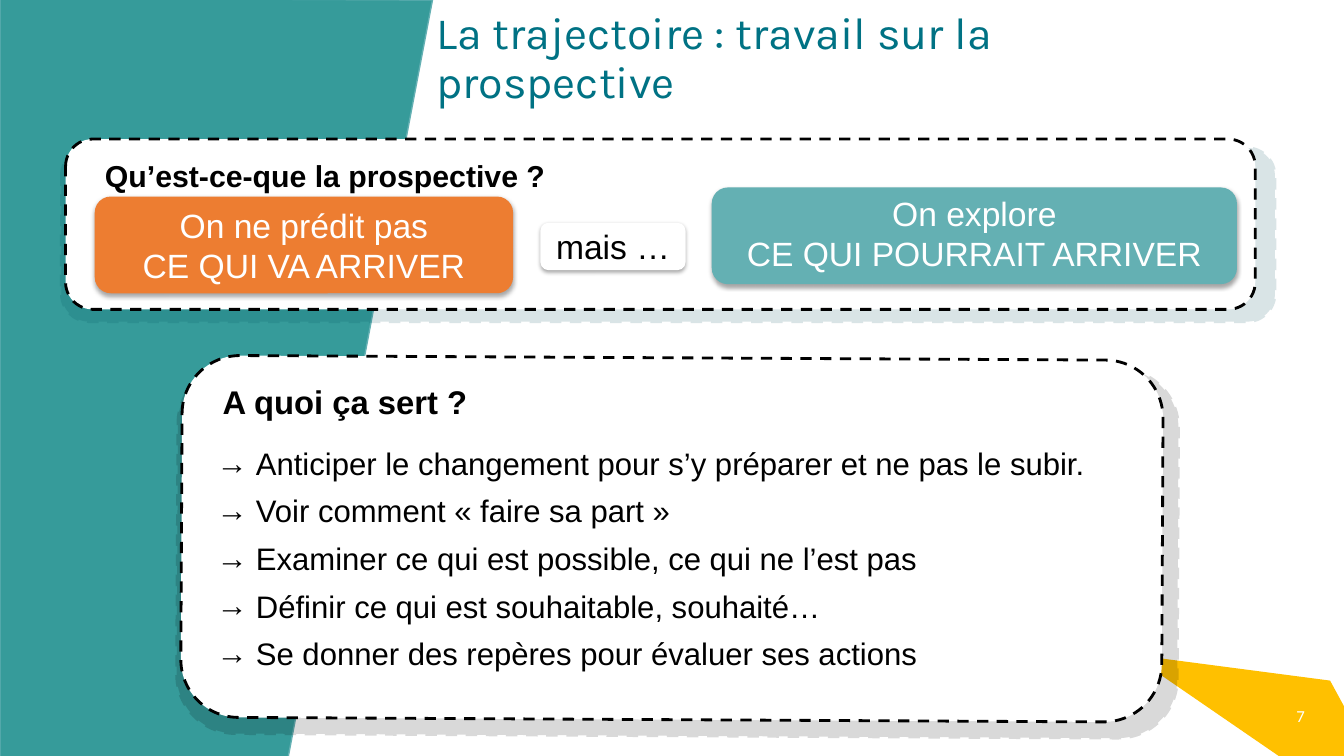
import math
from dataclasses import dataclass

import pptx
import pptx.dml.color
import pptx.enum.dml
import pptx.enum.shapes
import pptx.enum.text
import pptx.util
from lxml import etree

SHAPES = pptx.enum.shapes.MSO_SHAPE
ALIGN = pptx.enum.text.PP_ALIGN
ANCHOR = pptx.enum.text.MSO_ANCHOR
WIDTH, HEIGHT = 13.33, 7.5


@dataclass(frozen=True)
class Theme:
    teal: str = "369B9A"
    light_teal: str = "64B0B3"
    title_teal: str = "007284"
    shade_teal: str = "004E5C"
    orange: str = "ED7D31"
    yellow: str = "FFC000"
    white: str = "FFFFFF"
    black: str = "000000"
    body_font: str = "Arial"
    title_font: str = "Karla"
    number_font: str = "Calibri"
    title: float = 32
    label: float = 24
    purpose: float = 23.4
    bullet: float = 22.2
    question: float = 21.6
    number: float = 12


THEME = Theme()

# Places are left, top, width, height in percent of the slide.
TITLE = ("La trajectoire : travail sur la prospective", (31.73, 0.8, 56.19, 9.47))
NUMBER = ("7", (90.47, 92, 7.35, 5.33))
WEDGE = [(0, -0.27), (32.18, 0), (21.45, 100.13), (0, 100.13)]
CORNER = (83.95, 89.07, 26.18, 11.87)
CARDS = [  # place, rotation, shadow colour
    ((4.88, 18.4, 88.52, 22.53), 0, THEME.shade_teal),
    ((13.5, 47.33, 72.99, 47.87), 0.3, THEME.black),
]
QUESTION = ("Qu’est-ce-que la prospective ?", (4.88, 19.6, 39.91, 8.4))
PURPOSE = ("A quoi ça sert ?", (15.83, 46.53, 56.71, 13.87))
LABELS = [  # lines, place, fill, text colour, top inset
    (["On ne prédit pas", "CE QUI VA ARRIVER"], (7.05, 26, 31.13, 12.8),
     THEME.orange, THEME.white, 0.05),
    (["On explore", "CE QUI POURRAIT ARRIVER"], (52.96, 24.8, 39.08, 12.8),
     THEME.light_teal, THEME.white, 0),
    (["mais …"], (40.21, 29.47, 10.8, 6.27), THEME.white, THEME.black, 0.05),
]
REASONS = [
    "Anticiper le changement pour s’y préparer et ne pas le subir.",
    "Voir comment «\u00a0faire sa part\u00a0»",
    "Examiner ce qui est possible, ce qui ne l’est pas",
    "Définir ce qui est souhaitable, souhaité…",
    "Se donner des repères pour évaluer ses actions",
]
REASONS_PLACE = (15.38, 58.67, 69.17, 33.47)
BULLET_INDENT = 0.39


def color(code):
    return pptx.dml.color.RGBColor.from_string(code)


def inches(place):
    return [pptx.util.Inches(share / 100 * side)
            for share, side in zip(place, (WIDTH, HEIGHT) * 2)]


def paint(shape, fill, line=None, width=1):
    shape.shadow.inherit = False
    shape.fill.solid()
    shape.fill.fore_color.rgb = color(fill)
    if line:
        shape.line.color.rgb = color(line)
        shape.line.width = pptx.util.Pt(width)
    else:
        shape.line.fill.background()


def cast_shadow(shape, code, opacity, blur, distance, angle, scale=100):
    """Give a painted shape an outer shadow; lengths in points, the rest in percent and degrees."""
    effects = shape._element.spPr.find(pptx.oxml.ns.qn("a:effectLst"))
    shadow = etree.SubElement(
        effects, pptx.oxml.ns.qn("a:outerShdw"),
        blurRad=str(pptx.util.Pt(blur)), dist=str(pptx.util.Pt(distance)),
        dir=str(angle * 60000), sx=str(scale * 1000), sy=str(scale * 1000),
        algn="tl", rotWithShape="0")
    tint = etree.SubElement(shadow, pptx.oxml.ns.qn("a:srgbClr"), val=code)
    etree.SubElement(tint, pptx.oxml.ns.qn("a:alpha"), val=str(opacity * 1000))


def add_bullet(para):
    indent = pptx.util.Inches(BULLET_INDENT)
    props = para._p.get_or_add_pPr()
    props.set("marL", str(indent))
    props.set("indent", str(-indent))
    etree.SubElement(props, pptx.oxml.ns.qn("a:buFont"), typeface=THEME.body_font)
    etree.SubElement(props, pptx.oxml.ns.qn("a:buChar"), char="→")


def write(shape, lines, size, ink=THEME.black, font=THEME.body_font, bold=False,
          align=ALIGN.LEFT, anchor=ANCHOR.MIDDLE, spacing=1, gap=0,
          bullets=False, left=0.1, top=0.05):
    frame = shape.text_frame
    frame.word_wrap = True
    frame.vertical_anchor = anchor
    frame.margin_left = pptx.util.Inches(left)
    frame.margin_top = pptx.util.Inches(top)
    for index, line in enumerate(lines):
        para = frame.add_paragraph() if index else frame.paragraphs[0]
        para.alignment = align
        para.line_spacing = spacing
        if index and gap:
            para.space_before = pptx.util.Pt(gap)
        if bullets:
            add_bullet(para)
        span = para.add_run()
        span.text = line
        span.font.name = font
        span.font.size = pptx.util.Pt(size)
        span.font.bold = bold
        span.font.color.rgb = color(ink)


def build():
    deck = pptx.Presentation()
    deck.slide_width = pptx.util.Inches(WIDTH)
    deck.slide_height = pptx.util.Inches(HEIGHT)
    page = deck.slides.add_slide(deck.slide_layouts[6])
    shapes = page.shapes

    corners = [inches(point) for point in WEDGE]
    outline = shapes.build_freeform(*corners[0])
    outline.add_line_segments(corners[1:], close=True)
    paint(outline.convert_to_shape(), THEME.teal, THEME.light_teal)

    corner = shapes.add_shape(SHAPES.ISOSCELES_TRIANGLE, *inches(CORNER))
    corner.rotation = 34.5
    paint(corner, THEME.yellow, THEME.yellow)

    text, place = NUMBER
    write(shapes.add_textbox(*inches(place)), [text], THEME.number, THEME.white,
          THEME.number_font, align=ALIGN.RIGHT)
    text, place = TITLE
    write(shapes.add_textbox(*inches(place)), [text], THEME.title, THEME.title_teal,
          THEME.title_font, anchor=ANCHOR.TOP, spacing=0.9)

    for place, rotation, shade in CARDS:
        card = shapes.add_shape(SHAPES.ROUNDED_RECTANGLE, *inches(place))
        card.adjustments[0] = 0.16
        card.rotation = rotation
        paint(card, THEME.white, THEME.black, 2)
        card.line.dash_style = pptx.enum.dml.MSO_LINE.DASH
        cast_shadow(card, shade, 14, 0, 7, 115, scale=102)

    text, place = QUESTION
    write(shapes.add_textbox(*inches(place)), [text], THEME.question, bold=True,
          spacing=0.7, left=0.39)
    for lines, place, fill, ink, top in LABELS:
        label = shapes.add_shape(SHAPES.ROUNDED_RECTANGLE, *inches(place))
        paint(label, fill)
        cast_shadow(label, THEME.black, 35, 3.1, 1.8, 90)
        write(label, lines, THEME.label, ink, align=ALIGN.CENTER, top=top)

    reasons = shapes.add_shape(SHAPES.RECTANGLE, *inches(REASONS_PLACE))
    paint(reasons, THEME.white)
    write(reasons, REASONS, THEME.bullet, anchor=ANCHOR.TOP, spacing=0.9, gap=10,
          bullets=True)
    text, place = PURPOSE
    write(shapes.add_textbox(*inches(place)), [text], THEME.purpose, bold=True,
          spacing=0.9)

    deck.save("out.pptx")


if __name__ == "__main__":
    build()
